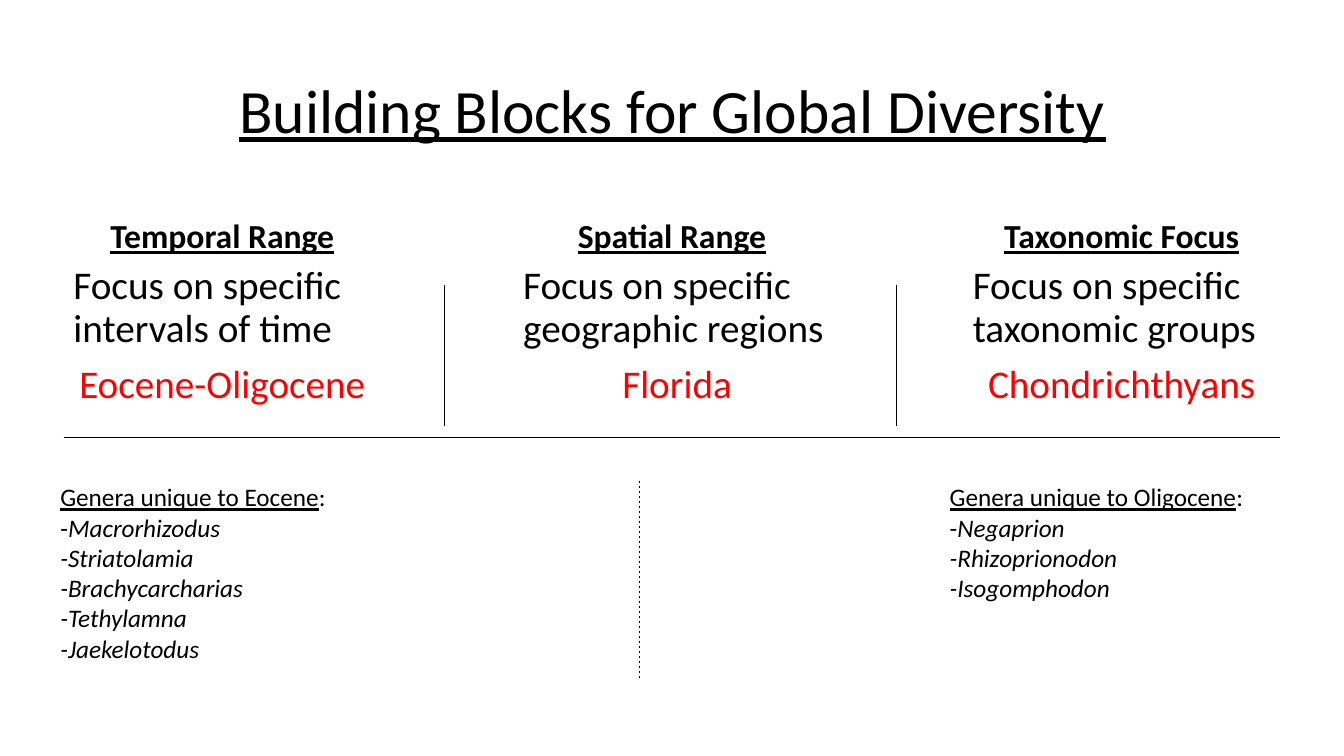
from pptx import Presentation
from pptx.dml.color import RGBColor
from pptx.enum import dml, shapes, text
from pptx.oxml.ns import qn
from pptx.util import Inches, Pt
from lxml import etree

TITLE = "Building Blocks for Global Diversity"
BLOCKS = [
    ("Temporal Range", "Focus on specific intervals of time", "Eocene-Oligocene", 3.15),
    ("Spatial Range", "Focus on specific geographic regions", "Florida", 3.25),
    ("Taxonomic Focus", "Focus on specific taxonomic groups", "Chondrichthyans", 3.15),
]
GENERA = [
    (0.5, 1.92, "Genera unique to Eocene",
     ["Macrorhizodus", "Striatolamia", "Brachycarcharias", "Tethylamna", "Jaekelotodus"]),
    (9.32, 1.62, "Genera unique to Oligocene",
     ["Negaprion", "Rhizoprionodon", "Isogomphodon"]),
]
RULES = [
    (4.41, 2.83, 4.41, 4.23, None),
    (8.89, 2.83, 8.89, 4.23, None),
    (0.63, 4.34, 12.7, 4.34, None),
    (6.34, 6.73, 6.34, 4.76, dml.MSO_LINE.DASH),
]
COLORS = {"ink": "000000", "accent": "FF0000"}
LEFT, STEP, WIDTH = 0.63, 4.46, 3.15
CENTER = text.PP_ALIGN.CENTER
BODY = {"line_spacing": 0.9, "space_before": Pt(10)}
MID = {**BODY, "alignment": CENTER}


def put(item, form):
    for key, value in form.items():
        setattr(item, key, value)


def run(para, words, size, color="ink", **form):
    part = para.add_run()
    part.text = words
    put(part.font, {"name": "Calibri", "size": Pt(size), **form})
    part.font.color.rgb = RGBColor.from_string(COLORS[color])


def box(slide, x, y, w, h, anchor=text.MSO_ANCHOR.TOP):
    frame = slide.shapes.add_textbox(*map(Inches, (x, y, w, h))).text_frame
    put(frame, {"word_wrap": True, "vertical_anchor": anchor})
    return frame


def head(slide):
    title = slide.shapes.title
    put(title, dict(zip(("left", "top", "width", "height"),
                        map(Inches, (0.92, 0.4, 11.5, 1.45)))))
    title.text_frame.vertical_anchor = text.MSO_ANCHOR.MIDDLE
    para = title.text_frame.paragraphs[0]
    put(para, {"alignment": CENTER, "line_spacing": 0.9})
    run(para, TITLE, 44, underline=True)


def block(slide, x, name, focus, choice, wide):
    para = box(slide, x, 1.69, WIDTH, 0.9, text.MSO_ANCHOR.BOTTOM).paragraphs[0]
    put(para, MID)
    run(para, name, 24, bold=True, underline=True)
    frame = box(slide, x, 2.59, wide, 4.03)
    put(frame.paragraphs[0], BODY)
    run(frame.paragraphs[0], focus, 28)
    para = frame.add_paragraph()
    put(para, MID)
    run(para, choice, 28, "accent")


def genera(slide, x, high, name, names):
    frame = box(slide, x, 4.73, 3.51, high)
    para = frame.paragraphs[0]
    run(para, name, 18, underline=True)
    run(para, ":", 18)
    for i, genus in enumerate(names):
        para = frame.add_paragraph()
        run(para, "-", 18, italic=i > 0)
        run(para, genus, 18, italic=True)


def rule(slide, x1, y1, x2, y2, dash):
    line = slide.shapes.add_connector(
        shapes.MSO_CONNECTOR.STRAIGHT, *map(Inches, (x1, y1, x2, y2)))
    line.line.color.rgb = RGBColor.from_string(COLORS["ink"])
    put(line.line, {"width": Pt(0.5), "dash_style": dash})
    etree.SubElement(line._element.spPr, qn("a:effectLst"))


def main():
    deck = Presentation()
    put(deck, {"slide_width": Inches(13.33), "slide_height": Inches(7.5)})
    slide = deck.slides.add_slide(deck.slide_layouts[5])
    head(slide)
    for i, item in enumerate(BLOCKS):
        block(slide, LEFT + i * STEP, *item)
    for item in GENERA:
        genera(slide, *item)
    for item in RULES:
        rule(slide, *item)
    deck.save("out.pptx")


if __name__ == "__main__":
    main()
